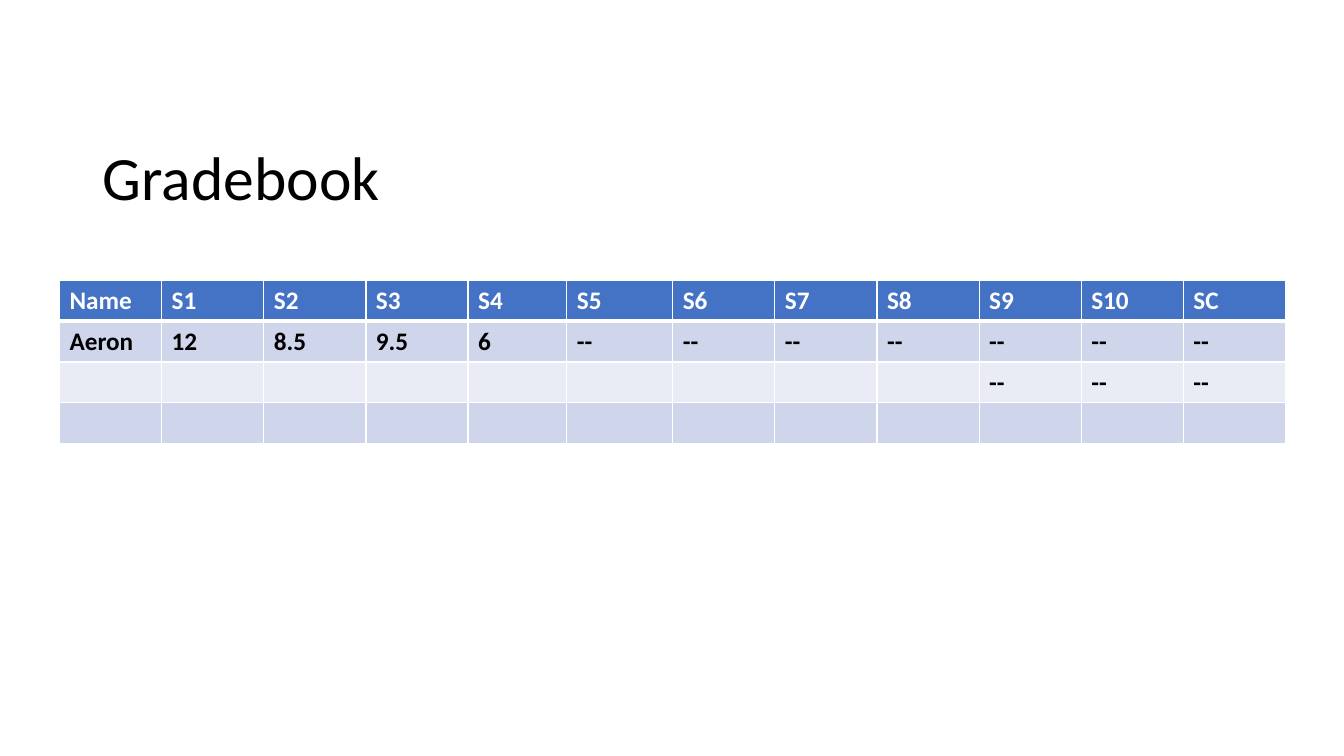
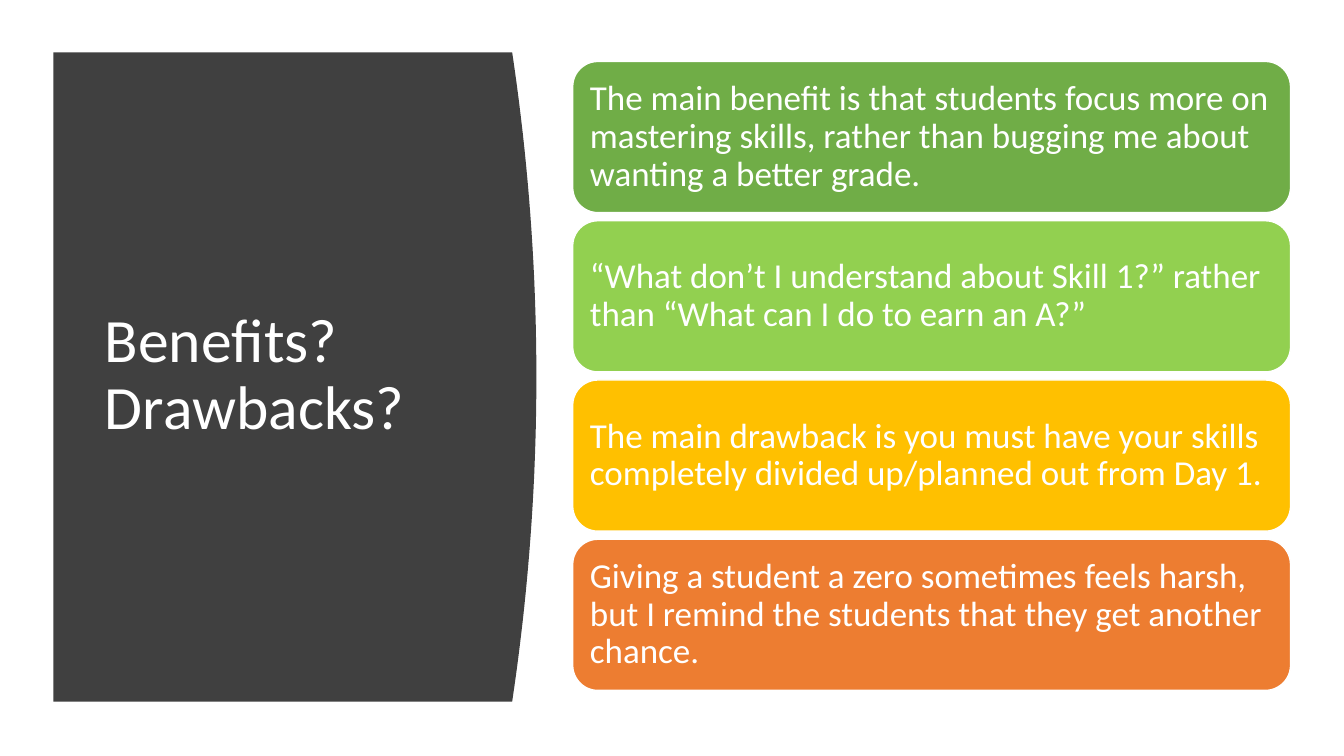
from lxml.etree import SubElement
from pptx import Presentation
from pptx.dml.color import RGBColor
from pptx.enum.shapes import MSO_SHAPE
from pptx.enum.text import MSO_ANCHOR, MSO_AUTO_SIZE, PP_ALIGN
from pptx.oxml.ns import qn
from pptx.util import Pt

EMU_PER_PX = 9144  # 100 px to the inch


def px(length):
    return round(length * EMU_PER_PX)


def color(code):
    return RGBColor.from_string(code)


class Deck:
    FONT = "Calibri"
    BLACK, WHITE, CHARCOAL = "000000", "FFFFFF", "404040"
    HEADER, BANDS = "4472C4", ("CFD5EA", "E9EBF5")
    TITLE_SIZE, CARD_SIZE, CELL_SIZE = 44, 25, 18

    def __init__(self, width, height):
        self.presentation = Presentation()
        self.presentation.slide_width = px(width)
        self.presentation.slide_height = px(height)
        self.slide = None

    def new_slide(self):
        layout = self.presentation.slide_layouts.get_by_name("Title Only")
        self.slide = self.presentation.slides.add_slide(layout)

    def add_text(self, frame, text, size, ink, bold=False, spacing=None):
        paragraph = frame.paragraphs[0]
        paragraph.alignment = PP_ALIGN.LEFT
        paragraph.line_spacing = spacing
        run = paragraph.add_run()
        run.text = text
        run.font.name = self.FONT
        run.font.size = Pt(size)
        run.font.bold = bold
        run.font.color.rgb = color(ink)

    def title(self, text, left, top, width, height, ink):
        title = self.slide.shapes.title
        title.left, title.top = px(left), px(top)
        title.width, title.height = px(width), px(height)
        frame = title.text_frame
        frame.word_wrap = True
        frame.auto_size = MSO_AUTO_SIZE.NONE
        frame.vertical_anchor = MSO_ANCHOR.MIDDLE
        self.add_text(frame, text, self.TITLE_SIZE, ink, spacing=0.9)

    def curved_panel(self, left, top, width, height, bulge, steps=40):
        """Draw, behind the title, a panel whose right edge is a parabola."""
        edge = []
        for step in range(steps + 1):
            offset = 2 * step / steps - 1
            edge.append((px(left + width - bulge * offset ** 2),
                         px(top + height * step / steps)))
        outline = self.slide.shapes.build_freeform(px(left), px(top))
        outline.add_line_segments(edge + [(px(left), px(top + height))])
        panel = outline.convert_to_shape()
        panel.shadow.inherit = False
        panel.fill.solid()
        panel.fill.fore_color.rgb = color(self.CHARCOAL)
        panel.line.fill.background()
        self.slide.shapes.title.element.addprevious(panel.element)

    def card(self, text, left, top, width, height, fill):
        card = self.slide.shapes.add_shape(
            MSO_SHAPE.ROUNDED_RECTANGLE, px(left), px(top), px(width), px(height))
        card.shadow.inherit = False
        card.fill.solid()
        card.fill.fore_color.rgb = color(fill)
        card.line.color.rgb = color(self.WHITE)
        card.line.width = Pt(1)
        frame = card.text_frame
        frame.word_wrap = True
        frame.vertical_anchor = MSO_ANCHOR.MIDDLE
        # The rounded corners already inset the text by 7 px.
        frame.margin_left = frame.margin_right = px(10)
        frame.margin_top = frame.margin_bottom = px(10)
        self.add_text(frame, text, self.CARD_SIZE, self.WHITE, spacing=0.9)

    def cell_borders(self, cell, top, bottom):
        properties = cell._tc.get_or_add_tcPr()
        for side, points in (("L", 1), ("R", 1), ("T", top), ("B", bottom)):
            border = SubElement(properties, qn(f"a:ln{side}"), w=str(int(Pt(points))))
            SubElement(SubElement(border, qn("a:solidFill")),
                       qn("a:srgbClr"), val=self.WHITE)

    def table(self, rows, left, top, widths, height):
        table = self.slide.shapes.add_table(
            len(rows), len(widths), px(left), px(top),
            px(sum(widths)), px(height)).table
        table.horz_banding = False
        for column, width in zip(table.columns, widths):
            column.width = px(width)
        for row, texts in enumerate(rows):
            fill = self.BANDS[(row - 1) % 2] if row else self.HEADER
            ink = self.BLACK if row else self.WHITE
            for column, text in enumerate(texts):
                cell = table.cell(row, column)
                self.cell_borders(cell, top=3 if row == 1 else 1,
                                  bottom=1 if row else 3)
                cell.fill.solid()
                cell.fill.fore_color.rgb = color(fill)
                if text:
                    self.add_text(cell.text_frame, text, self.CELL_SIZE, ink, bold=True)


def gradebook_slide(deck):
    deck.new_slide()
    deck.title("Gradebook", 92, 107, 1150, 145, deck.BLACK)
    skills = [f"S{number}" for number in range(1, 11)]
    grades = [
        ["Name", *skills, "SC"],
        ["Aeron", "12", "8.5", "9.5", "6"] + ["--"] * 7,
        [""] * 9 + ["--"] * 3,
        [""] * 12,
    ]
    widths = [101.3] * 4 + [98, 105] + [101.3] * 6
    deck.table(grades, 59, 278, widths, 162)


def benefits_slide(deck):
    deck.new_slide()
    deck.curved_panel(53, 52, 479, 644, bulge=24)
    deck.title("Benefits? Drawbacks?", 94, 111, 374, 524, deck.WHITE)
    points = [
        ("The main benefit is that students focus more on mastering skills, "
         "rather than bugging me about wanting a better grade.", "70AD47"),
        ("“What don’t I understand about Skill 1?” rather than "
         "“What can I do to earn an A?”", "92D050"),
        ("The main drawback is you must have your skills completely "
         "divided up/planned out from Day 1.", "FFC000"),
        ("Giving a student a zero sometimes feels harsh, but I remind "
         "the students that they get another chance.", "ED7D31"),
    ]
    card_height, gap = 150, 8
    for index, (text, fill) in enumerate(points):
        deck.card(text, 568, 61 + index * (card_height + gap), 712, card_height, fill)


def main():
    deck = Deck(1333, 750)
    gradebook_slide(deck)
    benefits_slide(deck)
    deck.presentation.save("out.pptx")


if __name__ == "__main__":
    main()
